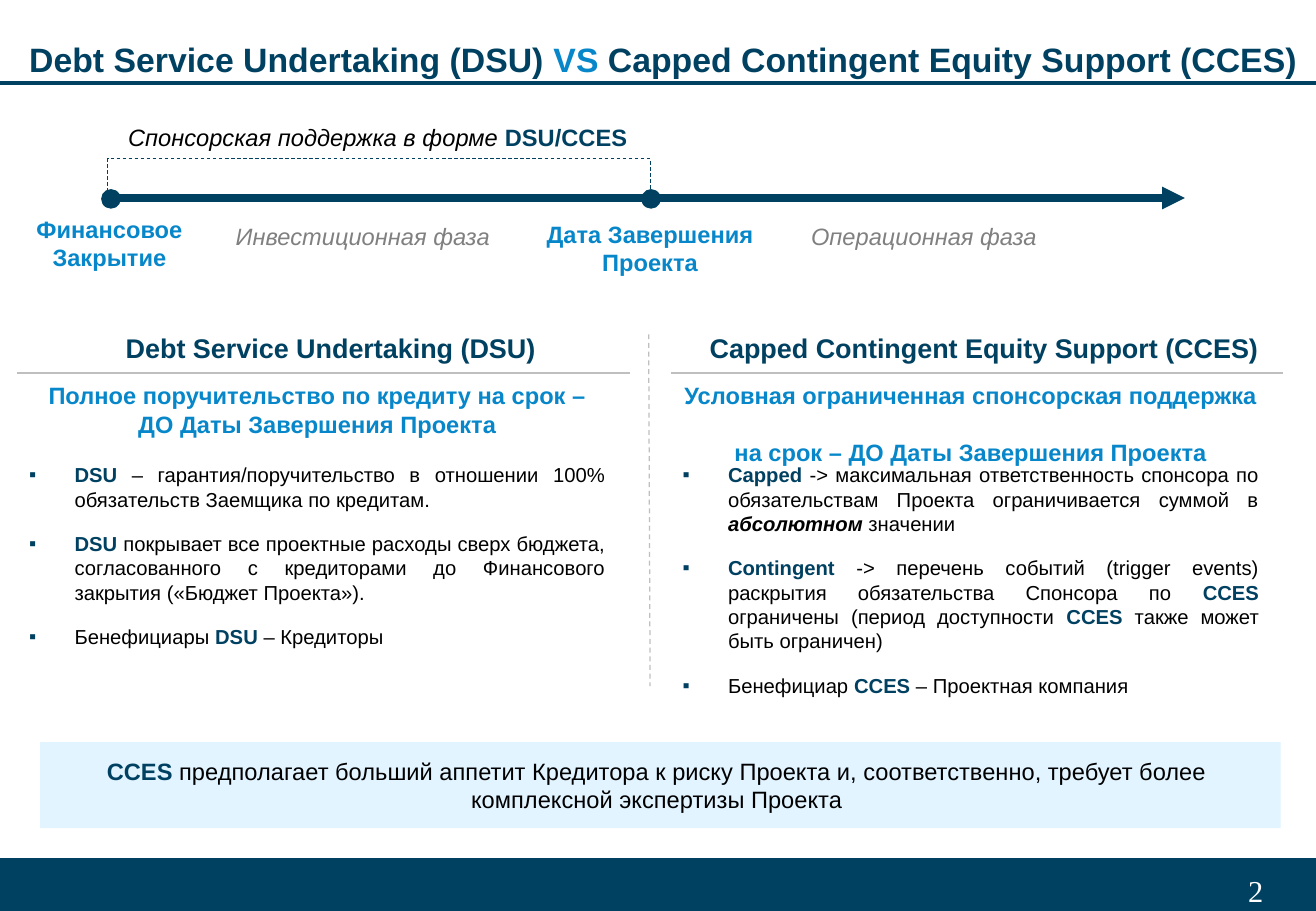
"""Builds the slide that compares DSU with CCES sponsor support."""
import lxml.etree
import pptx
import pptx.dml.color
import pptx.enum.dml
import pptx.enum.shapes
import pptx.enum.text
import pptx.oxml.ns
import pptx.util

Cm = pptx.util.Cm
Pt = pptx.util.Pt
ALIGN = pptx.enum.text.PP_ALIGN
ANCHOR = pptx.enum.text.MSO_ANCHOR
SHAPE = pptx.enum.shapes.MSO_SHAPE

THEME = {
    "navy": "004162", "blue": "0787CA", "black": "000000", "grey": "808080",
    "rule": "BFBFBF", "pale": "E1F4FF", "white": "FFFFFF",
    "font": "Arial", "number_font": "Times New Roman",
    "title": 20, "heading": 16, "label": 14, "bullet": 12, "number": 18,
}
STYLES = {
    "term": ("navy", True, False),
    "accent": ("blue", True, False),
    "plain": ("black", False, False),
    "stress": ("black", True, True),
    "italic": ("black", False, True),
    "phase": ("grey", False, True),
    "number": ("white", False, False),
}

TITLE = [[("Debt Service Undertaking (DSU) ", "term"), ("VS", "accent"),
          (" Capped Contingent Equity Support (CCES)", "term")]]
SUPPORT = [[("Спонсорская поддержка в форме ", "italic"), ("DSU/CCES", "term")]]
TIMELINE_LABELS = [
    ((0.03, 4.37, 4.52, 1.45), [[("Финансовое Закрытие", "accent")]]),
    ((4.17, 4.52, 6.83, 0.86), [[("Инвестиционная фаза", "phase")]]),
    ((11, 4.47, 5.18, 1.45), [[("Дата Завершения Проекта", "accent")]]),
    ((15.9, 4.52, 6.83, 0.86), [[("Операционная фаза", "phase")]]),
    ((2.36, 2.44, 11.07, 0.86), SUPPORT),
]
COLUMNS = [
    {
        "left": 0.36, "line_gap": 0,
        "heading": "Debt Service Undertaking (DSU)",
        "summary": ["Полное поручительство по кредиту на срок –",
                    "ДО Даты Завершения Проекта"],
        "bullets": [
            [("DSU", "term"), (" – гарантия/поручительство в отношении 100% "
                               "обязательств Заемщика по кредитам.", "plain")],
            [("DSU ", "term"), ("покрывает все проектные расходы сверх бюджета, "
                                "согласованного с кредиторами до Финансового "
                                "закрытия («Бюджет Проекта»).", "plain")],
            [("Бенефициары ", "plain"), ("DSU", "term"), (" – Кредиторы", "plain")],
        ],
    },
    {
        "left": 14.02, "line_gap": 16.5,
        "heading": "Capped Contingent Equity Support (CCES)",
        "summary": ["Условная ограниченная спонсорская поддержка",
                    "на срок – ДО Даты Завершения Проекта"],
        "bullets": [
            [("Capped", "term"), (" -> максимальная ответственность спонсора по "
                                  "обязательствам Проекта ограничивается суммой в ", "plain"),
             ("абсолютном", "stress"), (" значении", "plain")],
            [("Contingent", "term"), (" -> перечень событий (trigger events) раскрытия "
                                      "обязательства Спонсора по ", "plain"),
             ("СCES ", "term"), ("ограничены (период доступности ", "plain"),
             ("CCES ", "term"), ("также может быть ограничен)", "plain")],
            [("Бенефициар ", "plain"), ("СCES ", "term"), ("– Проектная компания", "plain")],
        ],
    },
]
CONCLUSION = [[("CCES", "term"), (" предполагает больший аппетит Кредитора к риску Проекта и, "
                                  "соответственно, требует более комплексной экспертизы "
                                  "Проекта", "plain")]]

WIDTH, HEIGHT = 27.51, 19.05
COLUMN_WIDTH, TEXT_WIDTH = 12.8, 12.55
AXIS_Y, DOT_SIZE = 4.14, 0.41
MILESTONES = (2.32, 13.61)
BRACKET = [(2.25, AXIS_Y), (2.25, 3.32), (13.6, 3.32), (13.6, 3.96)]


def colour(name):
    """Returns a theme colour."""
    return pptx.dml.color.RGBColor.from_string(THEME[name])


def add_child(parent, tag, **attributes):
    """Appends a DrawingML element."""
    return lxml.etree.SubElement(parent, pptx.oxml.ns.qn(tag), attributes)


def write(frame, paragraphs, size, align=ALIGN.CENTER, font="font"):
    """Fills a text frame with styled runs."""
    frame.word_wrap = True
    frame.auto_size = pptx.enum.text.MSO_AUTO_SIZE.NONE
    for index, runs in enumerate(paragraphs):
        paragraph = frame.add_paragraph() if index else frame.paragraphs[0]
        paragraph.alignment = align
        for text, style in runs:
            run = paragraph.add_run()
            run.text = text
            name, run.font.bold, run.font.italic = STYLES[style]
            run.font.color.rgb = colour(name)
            run.font.name = THEME[font]
            run.font.size = Pt(THEME[size])


def add_text(slide, box, paragraphs, size, **options):
    """Adds a text box and returns its frame."""
    frame = slide.shapes.add_textbox(*map(Cm, box)).text_frame
    write(frame, paragraphs, size, **options)
    return frame


def set_margins(frame, left, top, right, bottom):
    """Sets the insets of a text frame."""
    frame.margin_left, frame.margin_top = Cm(left), Cm(top)
    frame.margin_right, frame.margin_bottom = Cm(right), Cm(bottom)


def add_filled(slide, kind, box, fill):
    """Adds a plain filled shape."""
    shape = slide.shapes.add_shape(kind, *map(Cm, box))
    shape.shadow.inherit = False
    shape.fill.solid()
    shape.fill.fore_color.rgb = colour(fill)
    shape.line.fill.background()
    return shape


def style_line(line, name, width, dashed=False):
    """Sets colour, width and dash of a line."""
    line.color.rgb = colour(name)
    line.width = Pt(width)
    if dashed:
        line.dash_style = pptx.enum.dml.MSO_LINE.DASH


def add_line(slide, ends, name, width, dashed=False):
    """Adds a straight connector."""
    connector = slide.shapes.add_connector(
        pptx.enum.shapes.MSO_CONNECTOR.STRAIGHT, *map(Cm, ends))
    style_line(connector.line, name, width, dashed)
    add_child(connector._element.spPr, "a:effectLst")
    return connector


def add_frame(slide):
    """Adds the title, its rule and the footer."""
    footer = add_filled(slide, SHAPE.RECTANGLE, (0, 17.96, WIDTH, HEIGHT - 17.96), "navy")
    style_line(footer.line, "navy", 0.75)
    number = add_text(slide, (25.73, 18.01, 1.02, 0.89), [[("2", "number")]], "number",
                      align=ALIGN.LEFT, font="number_font")
    set_margins(number, 0.36, 0.23, 0.05, 0.13)
    add_line(slide, (0, 1.73, WIDTH, 1.73), "navy", 2.25)
    title = slide.shapes.title
    title.left, title.top, title.width, title.height = map(Cm, (0.36, 0.61, 27.15, 0.99))
    write(title.text_frame, TITLE, "title", align=ALIGN.LEFT)
    title.text_frame.vertical_anchor = ANCHOR.TOP
    set_margins(title.text_frame, 0.25, 0.2, 0.2, 0)


def add_timeline(slide):
    """Adds the project axis with milestones and labels."""
    axis = add_line(slide, (2.41, AXIS_Y, 24.77, AXIS_Y), "navy", 4.5)
    add_child(axis.line._get_or_add_ln(), "a:tailEnd", type="triangle")
    for centre in MILESTONES:
        add_filled(slide, SHAPE.OVAL, (centre - DOT_SIZE / 2, AXIS_Y + 0.02 - DOT_SIZE / 2,
                                       DOT_SIZE, DOT_SIZE), "navy")
    points = [(Cm(x), Cm(y)) for x, y in BRACKET]
    builder = slide.shapes.build_freeform(*points[0])
    builder.add_line_segments(points[1:], close=False)
    bracket = builder.convert_to_shape()
    bracket.shadow.inherit = False
    bracket.fill.background()
    style_line(bracket.line, "navy", 0.5, dashed=True)
    for box, paragraphs in TIMELINE_LABELS:
        add_text(slide, box, paragraphs, "label")


def add_column(slide, column):
    """Adds one side of the comparison."""
    left = column["left"]
    heading = add_text(slide, (left, 6.73, COLUMN_WIDTH, 1.09),
                       [[(column["heading"], "term")]], "heading")
    heading.vertical_anchor = ANCHOR.MIDDLE
    heading.paragraphs[0].line_spacing = 0.9
    set_margins(heading, 0.36, 0.23, 0.05, 0.13)
    add_line(slide, (left, 7.8, left + COLUMN_WIDTH, 7.8), "rule", 0.75)
    summary = add_text(slide, (left, 7.85, TEXT_WIDTH, 1.45),
                       [[(line, "accent")] for line in column["summary"]], "label")
    summary.paragraphs[1].space_before = Pt(column["line_gap"])
    bullets = add_text(slide, (left, 9.55, TEXT_WIDTH, 4.8), column["bullets"], "bullet",
                       align=ALIGN.JUSTIFY)
    for paragraph in bullets.paragraphs:
        paragraph.space_after = Pt(12)
        properties = paragraph._p.get_or_add_pPr()
        properties.set("marL", str(Cm(0.95)))
        properties.set("indent", str(-Cm(0.95)))
        add_child(add_child(properties, "a:buClr"), "a:srgbClr", val=THEME["navy"])
        add_child(properties, "a:buFont", typeface=THEME["font"])
        add_child(properties, "a:buChar", char="▪")


def main():
    """Builds and saves the presentation."""
    presentation = pptx.Presentation()
    presentation.slide_width, presentation.slide_height = Cm(WIDTH), Cm(HEIGHT)
    slide = presentation.slides.add_slide(presentation.slide_layouts[5])
    add_frame(slide)
    add_timeline(slide)
    for column in COLUMNS:
        add_column(slide, column)
    add_line(slide, (13.56, 6.99, 13.59, 14.35), "rule", 0.75, dashed=True)
    callout = add_filled(slide, SHAPE.RECTANGLE, (0.84, 15.52, 25.93, 1.8), "pale")
    write(callout.text_frame, CONCLUSION, "label")
    callout.text_frame.vertical_anchor = ANCHOR.MIDDLE
    set_margins(callout.text_frame, 0.25, 0.13, 0.4, 0.13)
    presentation.save("out.pptx")


if __name__ == "__main__":
    main()
